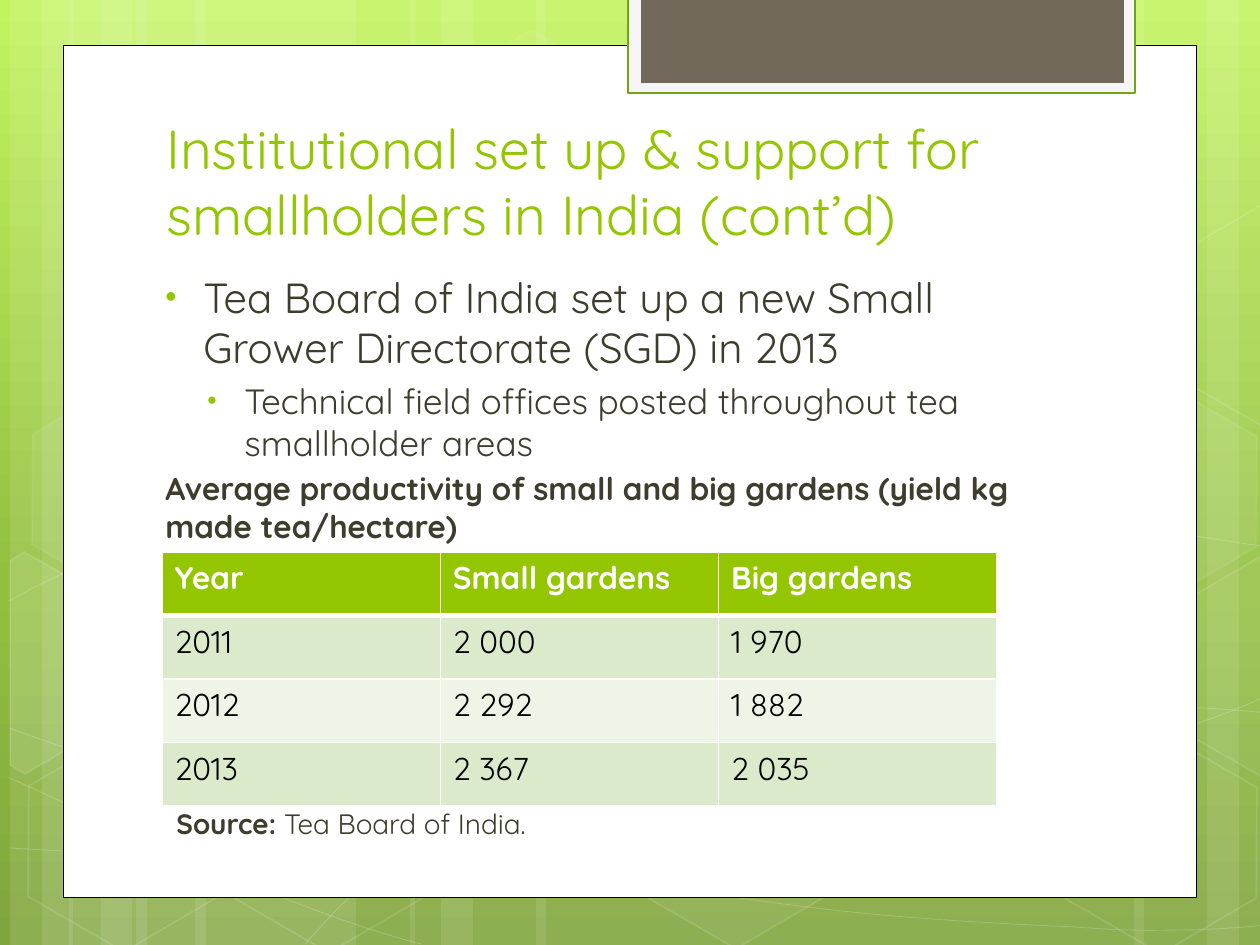
from copy import deepcopy
from math import cos, radians, sin

from lxml import etree
from pptx import Presentation
from pptx.dml.color import RGBColor
from pptx.enum.shapes import MSO_SHAPE
from pptx.enum.text import MSO_ANCHOR
from pptx.oxml.ns import qn
from pptx.util import Pt

RECTANGLE, HEXAGON = MSO_SHAPE.RECTANGLE, MSO_SHAPE.HEXAGON
TOP, BOTTOM = MSO_ANCHOR.TOP, MSO_ANCHOR.BOTTOM
PX = 914400 / 126
WIDTH, HEIGHT = 1260, 945
FONT = "Quicksand"
TILT = 30

WHITE, BLACK = RGBColor(255, 255, 255), RGBColor(0, 0, 0)
GREEN, DARK_GREEN = RGBColor(0x94, 0xC6, 0x00), RGBColor(0x74, 0xA5, 0x10)
INK, TAUPE = RGBColor(0x3E, 0x3D, 0x2D), RGBColor(0x71, 0x68, 0x5A)
PALE_GREY = RGBColor(0xF5, 0xF5, 0xF5)
BANDS = [RGBColor(0xDC, 0xEA, 0xCC), RGBColor(0xEE, 0xF5, 0xE7)]
BACKGROUND = [(0, RGBColor(0xC3, 0xF3, 0x5F)), (0.62, RGBColor(0x93, 0xBF, 0x3F)),
              (1, RGBColor(0x81, 0xA5, 0x3E))]

TITLE = "Institutional set up & support for smallholders in India (cont’d)"
# text, size, bold, left margin, first-line indent, bulleted
BODY = [
    ("Tea Board of India set up a new Small Grower Directorate (SGD) in 2013",
     24, False, 47, -38, True),
    ("Technical field offices posted throughout tea smallholder areas",
     20, False, 88, -37, True),
    ("Average productivity of small and big gardens (yield kg made tea/hectare)",
     18, True, 9, 0, False),
]
YIELDS = [
    ("Year", "Small gardens", "Big gardens"),
    ("2011", "2 000", "1 970"),
    ("2012", "2 292", "1 882"),
    ("2013", "2 367", "2 035"),
]
SOURCE = [("Source: ", True), ("Tea Board of India.", False)]

# left, width
STRIPS = [(136, 220), (10, 63), (42, 105), (195, 220), (69, 63), (101, 105),
          (924, 220), (1207, 63), (1134, 105), (536, 388), (410, 63), (441, 105)]
# start point, then three points for each Bézier segment
CURVES = [
    [(9, 848), (77, 852), (145, 856), (239, 854), (334, 853), (451, 850), (577, 838),
     (703, 825), (882, 801), (998, 777), (1113, 753), (1231, 716), (1269, 694)],
    [(9, 601), (45, 581), (82, 562), (152, 543), (224, 523), (326, 496), (437, 488),
     (549, 479), (685, 478), (824, 488), (963, 497), (1193, 537), (1269, 547)],
    [(8, 777), (160, 847), (311, 916), (421, 944)],
    [(9, 728), (48, 742), (88, 756), (161, 776), (234, 795), (344, 827), (450, 848),
     (554, 869), (687, 892), (791, 905), (896, 919), (1008, 924), (1075, 927),
     (1140, 932), (1158, 930), (1191, 930), (1223, 929), (1246, 927), (1269, 925)],
    [(305, 944), (328, 919), (350, 893), (381, 871), (411, 848), (454, 823), (489, 805),
     (524, 787), (546, 780), (592, 767), (638, 755), (722, 737), (766, 728),
     (811, 719), (818, 719), (857, 717), (896, 713), (958, 709), (1000, 708),
     (1045, 707), (1116, 708), (1116, 708), (1144, 708), (1173, 708), (1201, 708),
     (1223, 709), (1245, 711), (1268, 713)],
]
# left, top, fill opacity, line opacity
HEXAGONS = [(421, 45, 4, 8), (626, 742, 6, 12), (14, 745, 0, 12), (18, 393, 7, 8),
            (219, 746, 0, 12), (949, 571, 10, 12), (1051, 747, 0, 12), (1051, 396, 7, 8)]
LEFT_CUT = [(10, 561), (24, 552), (121, 607), (120, 718), (25, 774), (10, 765)]
RIGHT_CUT = [(1167, 611), (1261, 556), (1271, 562), (1271, 772), (1263, 777), (1167, 722)]
# corners as they lie on the slide, centre of the frame, fill opacity
CUT_HEXAGONS = [(LEFT_CUT, (45, 674), 10), (RIGHT_CUT, (1241, 655), 4),
                ([(x, y - 351) for x, y in RIGHT_CUT], (1241, 304), 0)]


def px(value):
    return round(value * PX)


def box(*lengths):
    return [px(length) for length in lengths]


def set_opacity(shape, path_to_fill, opacity):
    color = shape.element.spPr.find(path_to_fill + "/" + qn("a:srgbClr"))
    etree.SubElement(color, qn("a:alpha"), val=str(opacity * 1000))


def paint(shape, fill=None, line=None, line_width=1, fill_opacity=100, line_opacity=100):
    shape.shadow.inherit = False
    if fill is None or not fill_opacity:
        shape.fill.background()
    else:
        shape.fill.solid()
        shape.fill.fore_color.rgb = fill
        if fill_opacity < 100:
            set_opacity(shape, qn("a:solidFill"), fill_opacity)
    if line is None:
        shape.line.fill.background()
    else:
        shape.line.color.rgb = line
        shape.line.width = Pt(line_width)
        if line_opacity < 100:
            set_opacity(shape, qn("a:ln") + "/" + qn("a:solidFill"), line_opacity)


def add_outline(slide, points, close):
    points = [(px(x), px(y)) for x, y in points]
    builder = slide.shapes.build_freeform(*points[0])
    builder.add_line_segments(points[1:], close=close)
    return builder.convert_to_shape()


def add_curve(slide, points):
    """Draw the points as an outline, then join each three steps into one Bézier segment."""
    shape = add_outline(slide, points, False)
    steps = list(shape.element.iter(qn("a:lnTo")))
    outline = steps[0].getparent()
    for start in range(0, len(steps), 3):
        segment = etree.SubElement(outline, qn("a:cubicBezTo"))
        for step in steps[start:start + 3]:
            segment.append(step[0])
            outline.remove(step)
    return shape


def turn_back(point, centre):
    """Undo the tilt of a point about the centre of its frame."""
    x, y = point[0] - centre[0], point[1] - centre[1]
    c, s = cos(radians(TILT)), sin(radians(TILT))
    return centre[0] + x * c + y * s, centre[1] - x * s + y * c


def set_background(slide):
    fill = slide.background.fill
    fill.gradient()
    fill.gradient_angle = 270
    stop_list = slide.element.find(".//" + qn("a:gsLst"))
    stop_list.append(deepcopy(stop_list[-1]))
    for stop, (position, color) in zip(fill.gradient_stops, BACKGROUND):
        stop.position = position
        stop.color.rgb = color


def add_decoration(slide):
    for left, width in STRIPS:
        strip = slide.shapes.add_shape(RECTANGLE, *box(left, 0, width, HEIGHT))
        paint(strip, WHITE, fill_opacity=10)
    for curve in CURVES:
        paint(add_curve(slide, curve), None, WHITE, 0.5, line_opacity=20)
    for left, top, fill_opacity, line_opacity in HEXAGONS:
        hexagon = slide.shapes.add_shape(HEXAGON, *box(left, top, 220, 192))
        hexagon.rotation = TILT
        hexagon.adjustments[0], hexagon.adjustments[1] = 0.285, 1.155
        paint(hexagon, WHITE, WHITE, 1, fill_opacity, line_opacity)
    for corners, centre, fill_opacity in CUT_HEXAGONS:
        cut = add_outline(slide, [turn_back(corner, centre) for corner in corners], True)
        cut.rotation = TILT
        paint(cut, WHITE, WHITE, 1, fill_opacity, 12)


def add_panels(slide):
    for place, fill, line, line_width in [
        ((63, 45, 1134, 853), WHITE, BLACK, 0.5),
        ((628, -3, 507, 96), PALE_GREY, DARK_GREEN, 1.25),
        ((641, -3, 483, 86), TAUPE, None, 0),
    ]:
        paint(slide.shapes.add_shape(RECTANGLE, *box(*place)), fill, line, line_width)


def add_text_frame(slide, place, anchor=TOP):
    frame = slide.shapes.add_textbox(*box(*place)).text_frame
    frame.word_wrap = True
    frame.vertical_anchor = anchor
    return frame


def set_font(paragraph, size, color, bold=None):
    font = paragraph.font
    font.name, font.size, font.bold = FONT, Pt(size), bold
    font.color.rgb = color


def set_indent(paragraph, margin, indent=0, bulleted=False):
    properties = paragraph._p.get_or_add_pPr()
    properties.set("marL", str(px(margin)))
    properties.set("indent", str(px(indent)))
    if bulleted:
        bullet = [etree.Element(qn("a:buClr")), etree.Element(qn("a:buSzPct"), val="76000"),
                  etree.Element(qn("a:buFont"), typeface="Arial"),
                  etree.Element(qn("a:buChar"), char="•")]
        etree.SubElement(bullet[0], qn("a:srgbClr"), val=str(GREEN))
        position = len(properties.findall(qn("a:spcBef")))
        properties[position:position] = bullet


def add_texts(slide):
    title = add_text_frame(slide, (154, 96, 968, 157), BOTTOM).paragraphs[0]
    title.text = TITLE
    set_font(title, 31.5, GREEN)

    body = add_text_frame(slide, (144, 265, 942, 614))
    for index, (text, size, bold, margin, indent, bulleted) in enumerate(BODY):
        paragraph = body.add_paragraph() if index else body.paragraphs[0]
        paragraph.text = text
        paragraph.space_before = Pt(size * 0.2)
        set_font(paragraph, size, INK, bold)
        set_indent(paragraph, margin, indent, bulleted)

    source = add_text_frame(slide, (114, 800, 446, 47)).paragraphs[0]
    set_font(source, 16, INK)
    set_indent(source, 50)
    for text, bold in SOURCE:
        run = source.add_run()
        run.text, run.font.bold = text, bold


def set_borders(cell, widths):
    properties = cell._tc.get_or_add_tcPr()
    for side, width in widths.items():
        line = etree.SubElement(properties, qn("a:ln" + side), w=str(Pt(width)))
        fill = etree.SubElement(line, qn("a:solidFill"))
        etree.SubElement(fill, qn("a:srgbClr"), val=str(WHITE))


def add_yield_table(slide):
    table = slide.shapes.add_table(len(YIELDS), len(YIELDS[0]), *box(162, 552, 835, 254)).table
    for row, values in enumerate(YIELDS):
        header = row == 0
        for column, value in enumerate(values):
            cell = table.cell(row, column)
            cell.text = value
            set_font(cell.text_frame.paragraphs[0], 18, WHITE if header else BLACK, header)
            set_borders(cell, {"L": 1, "R": 1, "T": 3 if row == 1 else 1, "B": 3 if header else 1})
            cell.fill.solid()
            cell.fill.fore_color.rgb = GREEN if header else BANDS[(row - 1) % 2]


def main():
    presentation = Presentation()
    presentation.slide_width, presentation.slide_height = box(WIDTH, HEIGHT)
    slide = presentation.slides.add_slide(presentation.slide_layouts[6])
    set_background(slide)
    add_decoration(slide)
    add_panels(slide)
    add_texts(slide)
    add_yield_table(slide)
    presentation.save("out.pptx")


if __name__ == "__main__":
    main()
